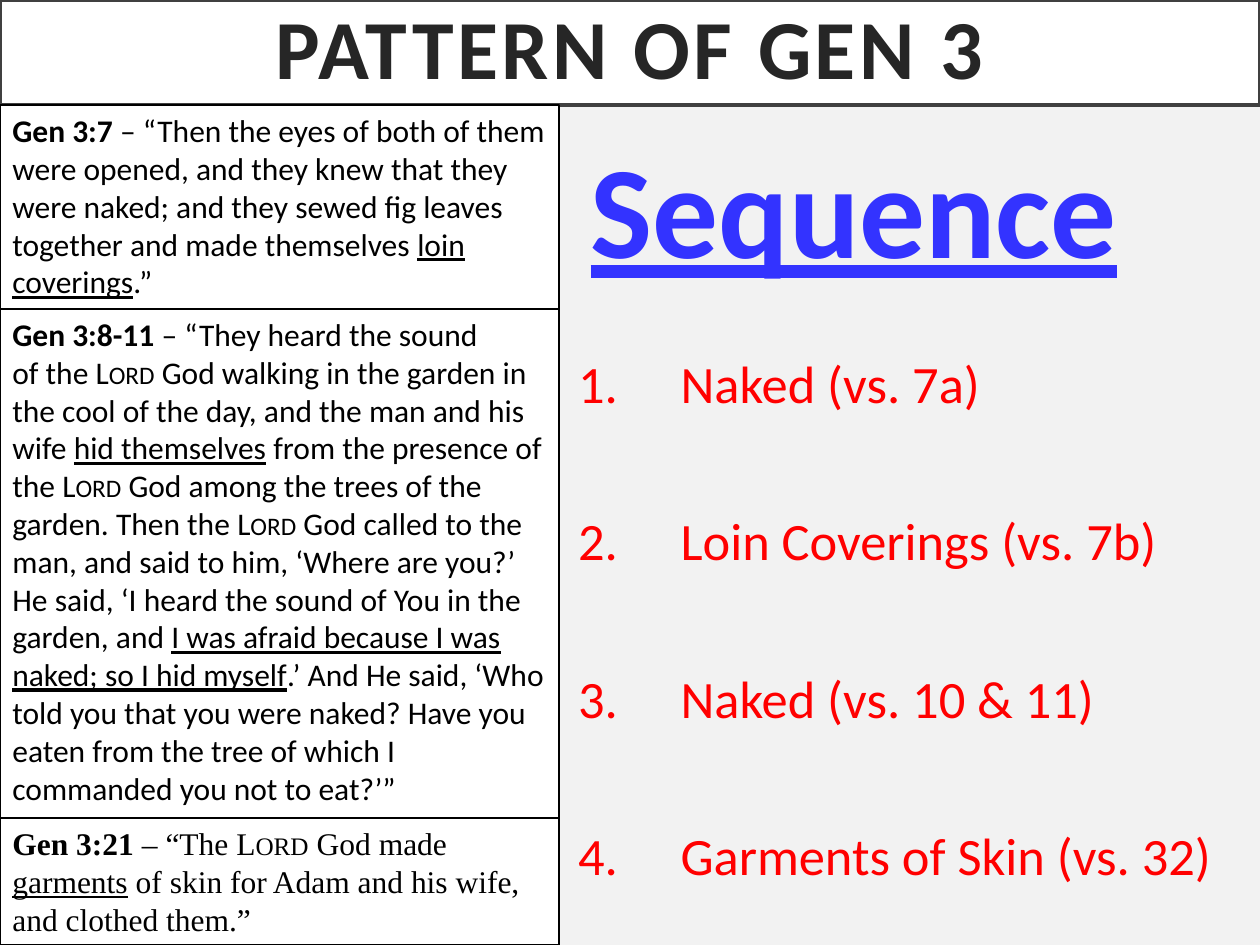
"""Build the slide on the pattern of Genesis 3, with verses beside a sequence."""
from lxml import etree
from pptx import Presentation
from pptx.dml.color import RGBColor
from pptx.enum.shapes import MSO_SHAPE
from pptx.enum.text import MSO_ANCHOR, MSO_AUTO_SIZE, PP_ALIGN
from pptx.oxml.ns import qn
from pptx.util import Pt

RECTANGLE = MSO_SHAPE.RECTANGLE
TOP, MIDDLE = MSO_ANCHOR.TOP, MSO_ANCHOR.MIDDLE
LEFT, CENTER = PP_ALIGN.LEFT, PP_ALIGN.CENTER
GROW, FIXED = MSO_AUTO_SIZE.SHAPE_TO_FIT_TEXT, MSO_AUTO_SIZE.NONE

COLORS = {
    "page": "F2F2F2", "panel": "FFFFFF", "frame": "404040", "title": "262626",
    "verse": "000000", "heading": "3333FF", "step": "FF0000",
}
SANS, SERIF = "Calibri", "Times New Roman"
TIE, HARD_SPACE = "~", chr(160)

TITLE = "PATTERN OF GEN 3"
HEADING = "Sequence"
STEPS = ["Naked (vs. 7a)", "Loin Coverings (vs. 7b)", "Naked (vs. 10 & 11)",
         "Garments of Skin (vs. 32)"]
VERSES = [
    (SANS, [
        ("Gen 3:7", "bold"),
        (" – “Then the eyes of both of them were opened, and they~knew that they were naked; "
         "and they sewed fig leaves together and made themselves ", ""),
        ("loin coverings", "underline"),
        (".”", ""),
    ]),
    (SANS, [
        ("Gen 3:8-11", "bold"),
        (" – “They heard the sound of~the~", ""),
        ("Lord", "small"),
        ("~God walking in the garden in the cool of the day,~and the man and his wife ", ""),
        ("hid themselves", "underline"),
        (" from the presence of the~", ""),
        ("Lord", "small"),
        ("~God among the trees of the garden. Then the~", ""),
        ("Lord", "small"),
        ("~God called to the man, and said to him, ‘Where are you?’ He said, "
         "‘I heard the sound of You in the garden, and ", ""),
        ("I was afraid because I was naked; so I hid myself", "underline"),
        (".’ And He said, ‘Who told you that you were naked? Have you eaten from "
         "the tree of which I commanded you not to eat?’”", ""),
    ]),
    (SERIF, [
        ("Gen 3:21", "bold"),
        (" – “The~", ""),
        ("Lord", "small"),
        ("~God made ", ""),
        ("garments", "underline"),
        (" of skin for Adam and his wife, and clothed them.”", ""),
    ]),
]

PAGE_WIDTH, PAGE_HEIGHT = 720, 540
VERSE_WIDTH = 319.5
VERSE_EDGES = [60, 176.5, 467.4, PAGE_HEIGHT]
STEP_INDENT = 58.5
STEP_GAP = 53.9


def color(name):
    return RGBColor.from_string(COLORS[name])


def apply(target, values):
    for name, value in values.items():
        setattr(target, name, value)


def add_span(para, text, ink, **values):
    span = para.add_run()
    span.text = text.replace(TIE, HARD_SPACE)
    apply(span.font, values)
    span.font.color.rgb = color(ink)
    return span


def add_panel(page, area, line, width, **frame_values):
    panel = page.shapes.add_shape(RECTANGLE, *map(Pt, area))
    panel.shadow.inherit = False
    panel.fill.solid()
    panel.fill.fore_color.rgb = color("panel")
    panel.line.color.rgb = color(line)
    panel.line.width = Pt(width)
    apply(panel.text_frame, {"word_wrap": True, **frame_values})
    return panel.text_frame


def add_title(page):
    inset = Pt(14.4)
    frame = add_panel(page, (0, 0, PAGE_WIDTH, VERSE_EDGES[0]), "frame", 2.5,
                      vertical_anchor=MIDDLE, auto_size=FIXED,
                      margin_left=inset, margin_right=inset,
                      margin_top=inset, margin_bottom=inset)
    para = frame.paragraphs[0]
    apply(para, {"alignment": CENTER, "line_spacing": 0.9})
    span = add_span(para, TITLE, "title", name=SANS, size=Pt(48), bold=True)
    span.font._element.set("spc", "200")


def add_verses(page):
    for (face, parts), top, bottom in zip(VERSES, VERSE_EDGES, VERSE_EDGES[1:]):
        frame = add_panel(page, (0, top, VERSE_WIDTH, bottom - top), "verse", 1,
                          vertical_anchor=TOP, auto_size=GROW)
        para = frame.paragraphs[0]
        para.alignment = LEFT
        for text, style in parts:
            span = add_span(para, text, "verse", name=face, size=Pt(18),
                            bold=style == "bold", underline=style == "underline")
            if style == "small":
                span.font._element.set("cap", "small")


def add_heading(page):
    box = page.shapes.add_textbox(*map(Pt, (330.5, 69.2, 355.7, 98)))
    apply(box.text_frame, {"word_wrap": False, "auto_size": GROW})
    add_span(box.text_frame.paragraphs[0], HEADING, "heading",
             name=SANS, size=Pt(75), bold=True, underline=True)


def add_steps(page):
    box = page.shapes.add_textbox(*map(Pt, (323.3, 197, 396.7, 316)))
    frame = box.text_frame
    apply(frame, {"word_wrap": True, "auto_size": GROW})
    for index, step in enumerate(STEPS):
        para = frame.add_paragraph() if index else frame.paragraphs[0]
        if index:
            para.space_before = Pt(STEP_GAP)
        properties = para._p.get_or_add_pPr()
        properties.set("marL", str(Pt(STEP_INDENT)))
        properties.set("indent", str(-Pt(STEP_INDENT)))
        etree.SubElement(properties, qn("a:buFont"), typeface="+mj-lt")
        etree.SubElement(properties, qn("a:buAutoNum"), type="arabicPeriod")
        add_span(para, step, "step", name=SANS, size=Pt(30))


def main():
    deck = Presentation()
    apply(deck, {"slide_width": Pt(PAGE_WIDTH), "slide_height": Pt(PAGE_HEIGHT)})
    page = deck.slides.add_slide(deck.slide_layouts[6])
    page.background.fill.solid()
    page.background.fill.fore_color.rgb = color("page")
    add_title(page)
    add_verses(page)
    add_heading(page)
    add_steps(page)
    deck.save("out.pptx")


if __name__ == "__main__":
    main()
